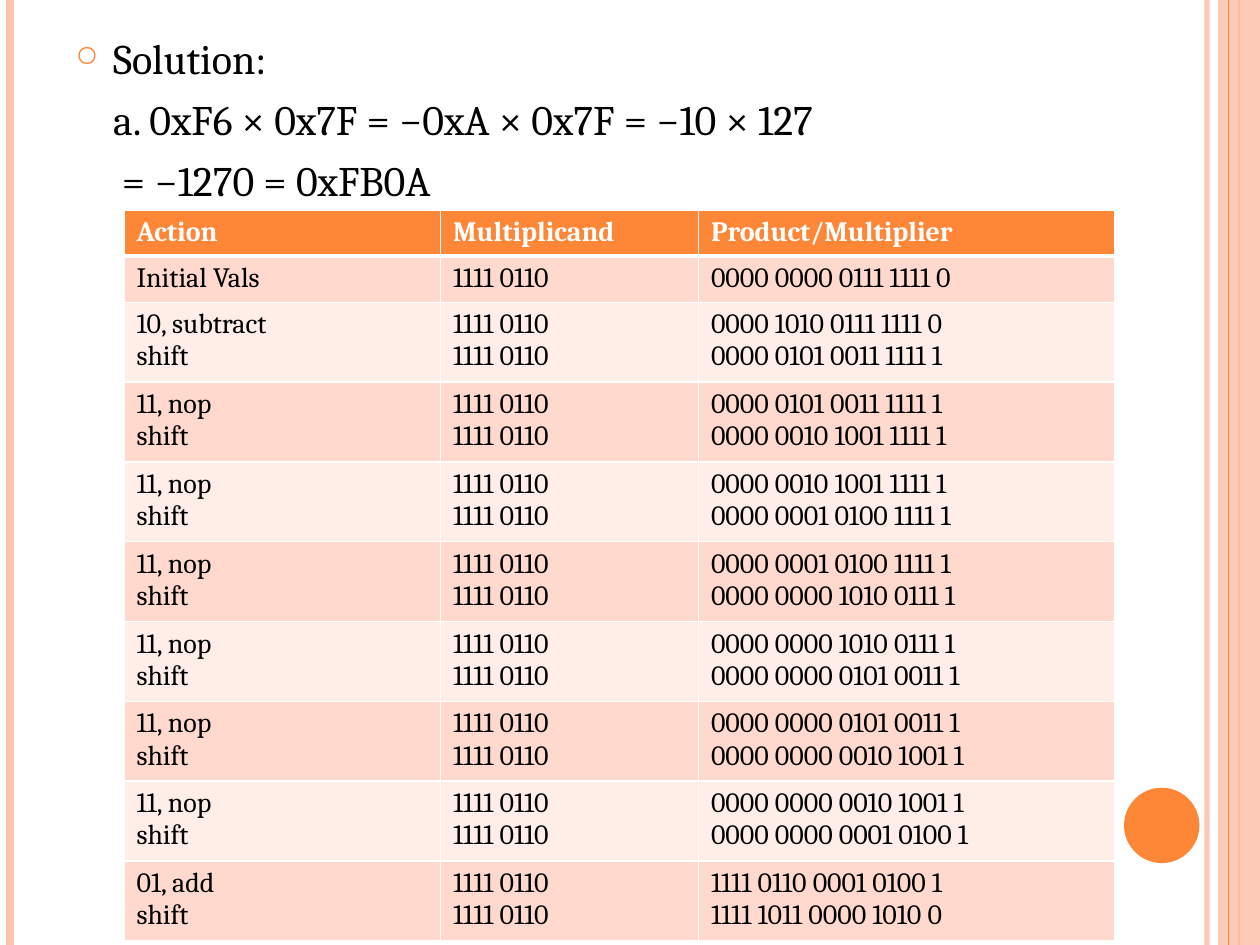
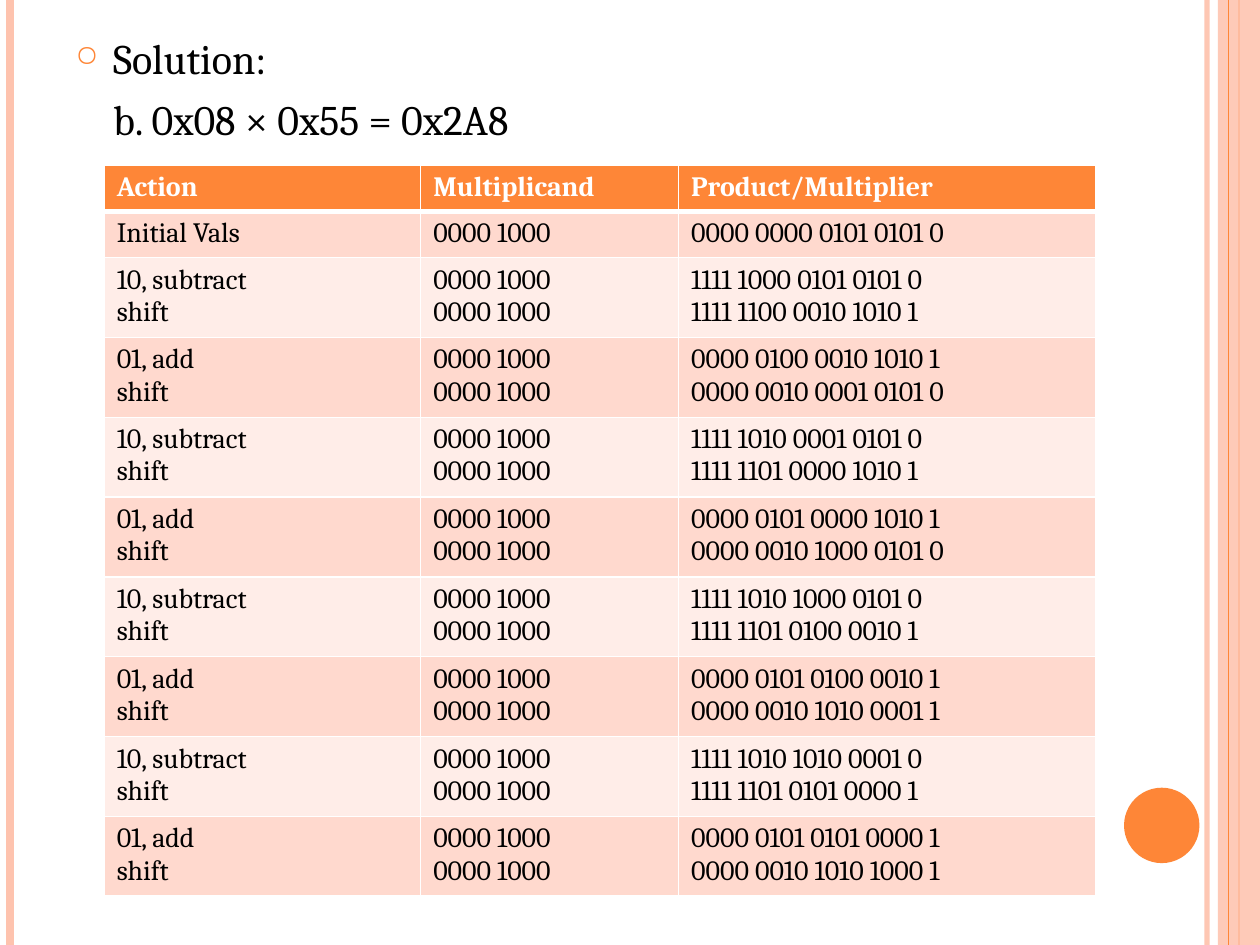
"""Build two slides that trace Booth multiplication step by step."""
from dataclasses import dataclass
from typing import Any

from lxml import etree
from pptx import Presentation, util as u
from pptx.dml import color as dml
from pptx.enum import shapes, text
from pptx.oxml import ns

FONT = "Cambria"
ORANGE, PEACH, WHITE, BLACK = "FE8637", "FEC3AE", "FFFFFF", "000000"
STRIPES = ("FFD9CE", "FFEDE8")
SLIDE_WIDTH, SLIDE_HEIGHT = u.Cm(25.4), u.Cm(19.05)
COLUMN_WIDTHS = (6.38, 5.2, 8.4)
HEADINGS = ("Action", "Multiplicand", "Product/Multiplier")
ONE_LINE, TWO_LINES = 0.9, 1.55
TEXT_INDENT = 0.76


@dataclass(frozen=True)
class Rule:
    """A vertical line over the full slide height."""
    x: float
    color: str
    weight: float
    opacity: int = 100


@dataclass(frozen=True)
class Step:
    """One round: the action, then the product before and after the shift."""
    action: str
    product: str
    shifted: str


@dataclass(frozen=True)
class Solution:
    """The content of one slide."""
    equations: tuple[tuple[str, float], ...]
    statement_height: float
    table_left: float
    table_top: float
    multiplicand: str
    initial: str
    steps: tuple[Step, ...]


BAND_AXIS = Rule(24.98, ORANGE, 1.5)
RULES_BEHIND = (Rule(24.33, PEACH, 3, 93), Rule(0.21, PEACH, 4.5))
BAND_EDGE = Rule(24.77, ORANGE, 0.75)

SOLUTIONS = (
    Solution(
        (("a. 0xF6 × 0x7F = −0xA × 0x7F = −10 × 127", TEXT_INDENT),
         ("= −1270 = 0xFB0A", 0.94)),
        3.61, 2.5, 4.23, "1111 0110", "0000 0000 0111 1111 0",
        (Step("10, subtract", "0000 1010 0111 1111 0", "0000 0101 0011 1111 1"),
         Step("11, nop", "0000 0101 0011 1111 1", "0000 0010 1001 1111 1"),
         Step("11, nop", "0000 0010 1001 1111 1", "0000 0001 0100 1111 1"),
         Step("11, nop", "0000 0001 0100 1111 1", "0000 0000 1010 0111 1"),
         Step("11, nop", "0000 0000 1010 0111 1", "0000 0000 0101 0011 1"),
         Step("11, nop", "0000 0000 0101 0011 1", "0000 0000 0010 1001 1"),
         Step("11, nop", "0000 0000 0010 1001 1", "0000 0000 0001 0100 1"),
         Step("01, add", "1111 0110 0001 0100 1", "1111 1011 0000 1010 0"))),
    Solution(
        (("b. 0x08 × 0x55 = 0x2A8", TEXT_INDENT),),
        2.59, 2.1, 3.33, "0000 1000", "0000 0000 0101 0101 0",
        (Step("10, subtract", "1111 1000 0101 0101 0", "1111 1100 0010 1010 1"),
         Step("01, add", "0000 0100 0010 1010 1", "0000 0010 0001 0101 0"),
         Step("10, subtract", "1111 1010 0001 0101 0", "1111 1101 0000 1010 1"),
         Step("01, add", "0000 0101 0000 1010 1", "0000 0010 1000 0101 0"),
         Step("10, subtract", "1111 1010 1000 0101 0", "1111 1101 0100 0010 1"),
         Step("01, add", "0000 0101 0100 0010 1", "0000 0010 1010 0001 1"),
         Step("10, subtract", "1111 1010 1010 0001 0", "1111 1101 0101 0000 1"),
         Step("01, add", "0000 0101 0101 0000 1", "0000 0010 1010 1000 1"))),
)


def rgb(value: str) -> dml.RGBColor:
    """Turn a hex string into a colour."""
    return dml.RGBColor.from_string(value)


def apply(target: Any, formats: dict[str, Any]) -> None:
    """Set each format value on the target."""
    for attribute, value in formats.items():
        setattr(target, attribute, value)


def add_element(parent: Any, tag: str, **attributes: Any) -> Any:
    """Append a DrawingML element."""
    values = {key: str(value) for key, value in attributes.items()}
    return etree.SubElement(parent, ns.qn(tag), values)


def paint(fill: Any, color: str, opacity: int = 100) -> None:
    """Give a fill one colour, transparent where asked."""
    fill.solid()
    fill.fore_color.rgb = rgb(color)
    if opacity < 100:
        for tone in fill._xPr.iter(ns.qn("a:srgbClr")):
            add_element(tone, "a:alpha", val=opacity * 1000)


def style_font(paragraph: Any, size: float, color: str, bold: bool = False) -> None:
    """Format the text of one paragraph."""
    apply(paragraph.font, {"name": FONT, "size": u.Pt(size), "bold": bold})
    paragraph.font.color.rgb = rgb(color)
    for run in paragraph.runs:
        apply(run.font, {"name": FONT, "size": u.Pt(size), "bold": bold})
        run.font.color.rgb = rgb(color)


def draw_rule(slide: Any, rule: Rule) -> Any:
    """Draw one vertical line."""
    x = u.Cm(rule.x)
    line = slide.shapes.add_connector(
        shapes.MSO_CONNECTOR.STRAIGHT, x, 0, x, SLIDE_HEIGHT)
    line.line.width = u.Pt(rule.weight)
    paint(line.line.fill, rule.color, rule.opacity)
    add_element(line._element.spPr, "a:effectLst")
    return line


def draw_solid(slide: Any, kind: Any, left: float, top: float, width: float,
               height: float, color: str, opacity: int = 100) -> Any:
    """Draw a plain shape without outline."""
    solid = slide.shapes.add_shape(
        kind, u.Cm(left), u.Cm(top), u.Cm(width), u.Cm(height))
    solid.shadow.inherit = False
    solid.line.fill.background()
    paint(solid.fill, color, opacity)
    return solid


def draw_frame(slide: Any) -> None:
    """Draw the side rules, right band and disc shared by the slides."""
    for rule in RULES_BEHIND:
        draw_rule(slide, rule)
    axis = draw_rule(slide, BAND_AXIS)
    band = draw_solid(slide, shapes.MSO_SHAPE.RECTANGLE,
                      24.55, 0, 0.85, 19.05, PEACH, 87)
    axis.begin_connect(band, 0)
    axis.end_connect(band, 2)
    draw_rule(slide, BAND_EDGE)
    draw_solid(slide, shapes.MSO_SHAPE.OVAL, 22.66, 15.88, 1.52, 1.52, ORANGE)


def draw_statement(slide: Any, solution: Solution) -> None:
    """Write the bulleted heading and the equations under it."""
    statement = slide.shapes.add_textbox(
        u.Cm(1.27), u.Cm(0.53), u.Cm(20.75), u.Cm(solution.statement_height))
    frame = statement.text_frame
    apply(frame, {"word_wrap": True, "vertical_anchor": text.MSO_ANCHOR.TOP})
    lines = (("Solution:", TEXT_INDENT), *solution.equations)
    frame.text = "\n".join(words for words, _ in lines)
    for paragraph, (_, indent) in zip(frame.paragraphs, lines):
        paragraph.space_before = u.Pt(6)
        style_font(paragraph, 24, BLACK)
        paragraph._p.get_or_add_pPr().set("marL", str(u.Cm(indent)))
    heading = frame.paragraphs[0]._p.pPr
    heading.set("indent", str(-u.Cm(TEXT_INDENT)))
    default_font = heading.find(ns.qn("a:defRPr"))
    bullet_color = add_element(heading, "a:buClr")
    add_element(bullet_color, "a:srgbClr", val=ORANGE)
    add_element(heading, "a:buSzPct", val=70000)
    add_element(heading, "a:buChar", char="○")
    heading.append(default_font)


def fill_cell(cell: Any, words: str, row: int) -> None:
    """Write one cell with the borders and colours of its row."""
    header = row == 0
    borders = {"a:lnL": 1, "a:lnR": 1, "a:lnT": 3 if row == 1 else 1,
               "a:lnB": 3 if header else 1}
    for side, weight in borders.items():
        border = add_element(cell._tc.get_or_add_tcPr(), side, w=u.Pt(weight))
        add_element(add_element(border, "a:solidFill"), "a:srgbClr", val=WHITE)
    paint(cell.fill, ORANGE if header else STRIPES[(row - 1) % 2])
    cell.text = words
    for paragraph in cell.text_frame.paragraphs:
        style_font(paragraph, 16, WHITE if header else BLACK, header)


def draw_trace(slide: Any, solution: Solution) -> None:
    """Draw the table of register values."""
    multiplicand = solution.multiplicand
    rows = [HEADINGS, ("Initial Vals", multiplicand, solution.initial)]
    rows += [(f"{step.action}\nshift", f"{multiplicand}\n{multiplicand}",
              f"{step.product}\n{step.shifted}") for step in solution.steps]
    heights = [TWO_LINES if "\n" in row[0] else ONE_LINE for row in rows]
    trace = slide.shapes.add_table(
        len(rows), len(HEADINGS), u.Cm(solution.table_left),
        u.Cm(solution.table_top), u.Cm(sum(COLUMN_WIDTHS)),
        u.Cm(sum(heights))).table
    for column, width in zip(trace.columns, COLUMN_WIDTHS):
        column.width = u.Cm(width)
    for index, (values, height) in enumerate(zip(rows, heights)):
        trace.rows[index].height = u.Cm(height)
        for column, words in enumerate(values):
            fill_cell(trace.cell(index, column), words, index)


def main() -> None:
    """Build and save the presentation."""
    deck = Presentation()
    apply(deck, {"slide_width": SLIDE_WIDTH, "slide_height": SLIDE_HEIGHT})
    for solution in SOLUTIONS:
        slide = deck.slides.add_slide(deck.slide_layouts[6])
        draw_frame(slide)
        draw_statement(slide, solution)
        draw_trace(slide, solution)
    deck.save("out.pptx")


if __name__ == "__main__":
    main()
